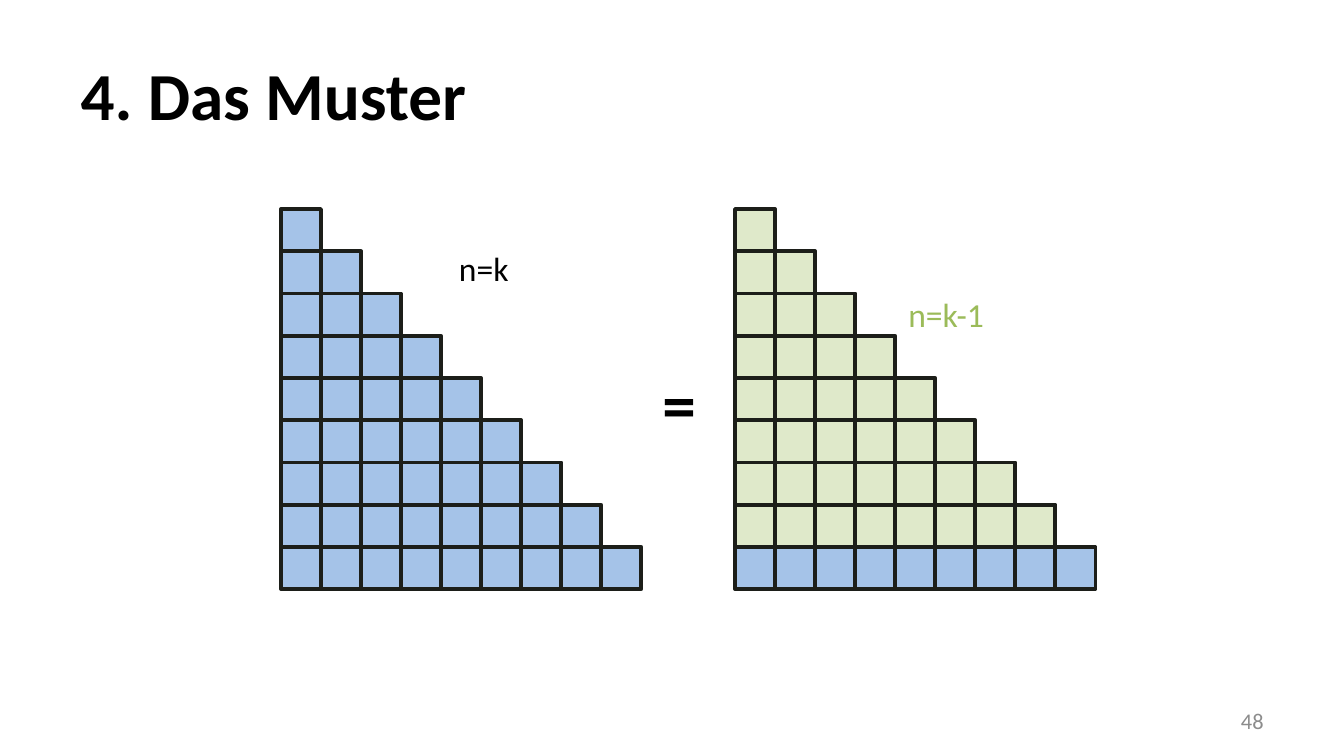
from dataclasses import dataclass

from lxml.etree import SubElement
from pptx import Presentation
from pptx.dml.color import RGBColor
from pptx.enum.shapes import MSO_SHAPE
from pptx.enum.text import MSO_ANCHOR, MSO_AUTO_SIZE, PP_ALIGN
from pptx.oxml.ns import qn
from pptx.util import Pt


@dataclass(frozen=True)
class Theme:
    font: str = "Calibri"
    black: str = "000000"
    gray: str = "8C8C8C"
    outline: str = "1C1E19"
    blue: str = "558ED5"
    green: str = "C3D69B"
    green_text: str = "9BBB59"
    opacity: int = 53
    title_size: int = 36
    label_size: int = 18
    number_size: int = 12


theme = Theme()


def write_text(shape, text, size, color, bold=False, align=PP_ALIGN.LEFT):
    paragraph = shape.text_frame.paragraphs[0]
    paragraph.alignment = align
    run = paragraph.add_run()
    run.text = text
    run.font.name = theme.font
    run.font.size = Pt(size)
    run.font.bold = bold
    run.font.color.rgb = RGBColor.from_string(color)


def add_cells(slide, left, rows, color):
    for row in rows:
        for column in range(row + 1):
            cell = slide.shapes.add_shape(
                MSO_SHAPE.RECTANGLE,
                Pt(left + column * column_step), Pt(stairs_top + row * row_step),
                Pt(column_step), Pt(row_step),
            )
            cell.shadow.inherit = False
            cell.fill.solid()
            cell.fill.fore_color.rgb = RGBColor.from_string(color)
            fill_color = cell.fill._xPr.find(qn("a:solidFill"))[0]
            SubElement(fill_color, qn("a:alpha"), val=str(theme.opacity * 1000))
            cell.line.color.rgb = RGBColor.from_string(theme.outline)
            cell.line.width = Pt(2)


presentation = Presentation()
presentation.slide_width = Pt(720)
presentation.slide_height = Pt(405)
slide = presentation.slides.add_slide(presentation.slide_layouts[5])

title = slide.shapes.title
title.left, title.top, title.width, title.height = Pt(36), Pt(16.2), Pt(648), Pt(67.5)
title.text_frame.vertical_anchor = MSO_ANCHOR.MIDDLE
write_text(title, "4. Das Muster", theme.title_size, theme.black, bold=True)

page_number = slide.shapes.add_textbox(Pt(516), Pt(375.4), Pt(168), Pt(21.6))
page_number.text_frame.word_wrap = True
page_number.text_frame.vertical_anchor = MSO_ANCHOR.MIDDLE
write_text(page_number, "48", theme.number_size, theme.gray, align=PP_ALIGN.RIGHT)

step_count = 9
column_step, row_step = 21.45, 22.63
stairs_top = 112
left_stairs, right_stairs = 150.5, 393.8
last_row = step_count - 1

add_cells(slide, left_stairs, range(step_count), theme.blue)
add_cells(slide, right_stairs, range(last_row), theme.green)
add_cells(slide, right_stairs, [last_row], theme.blue)

labels = [
    ("=", 347.8, 190.8, 31, 51, theme.title_size, theme.black, True),
    ("n=k", 238.8, 129.3, 45.4, 29, theme.label_size, theme.black, False),
    ("n=k-1", 479.5, 154.1, 65.5, 29, theme.label_size, theme.green_text, False),
]
for text, left, top, width, height, size, color, bold in labels:
    label = slide.shapes.add_textbox(Pt(left), Pt(top), Pt(width), Pt(height))
    label.text_frame.word_wrap = True
    label.text_frame.auto_size = MSO_AUTO_SIZE.SHAPE_TO_FIT_TEXT
    write_text(label, text, size, color, bold)

presentation.save("out.pptx")
